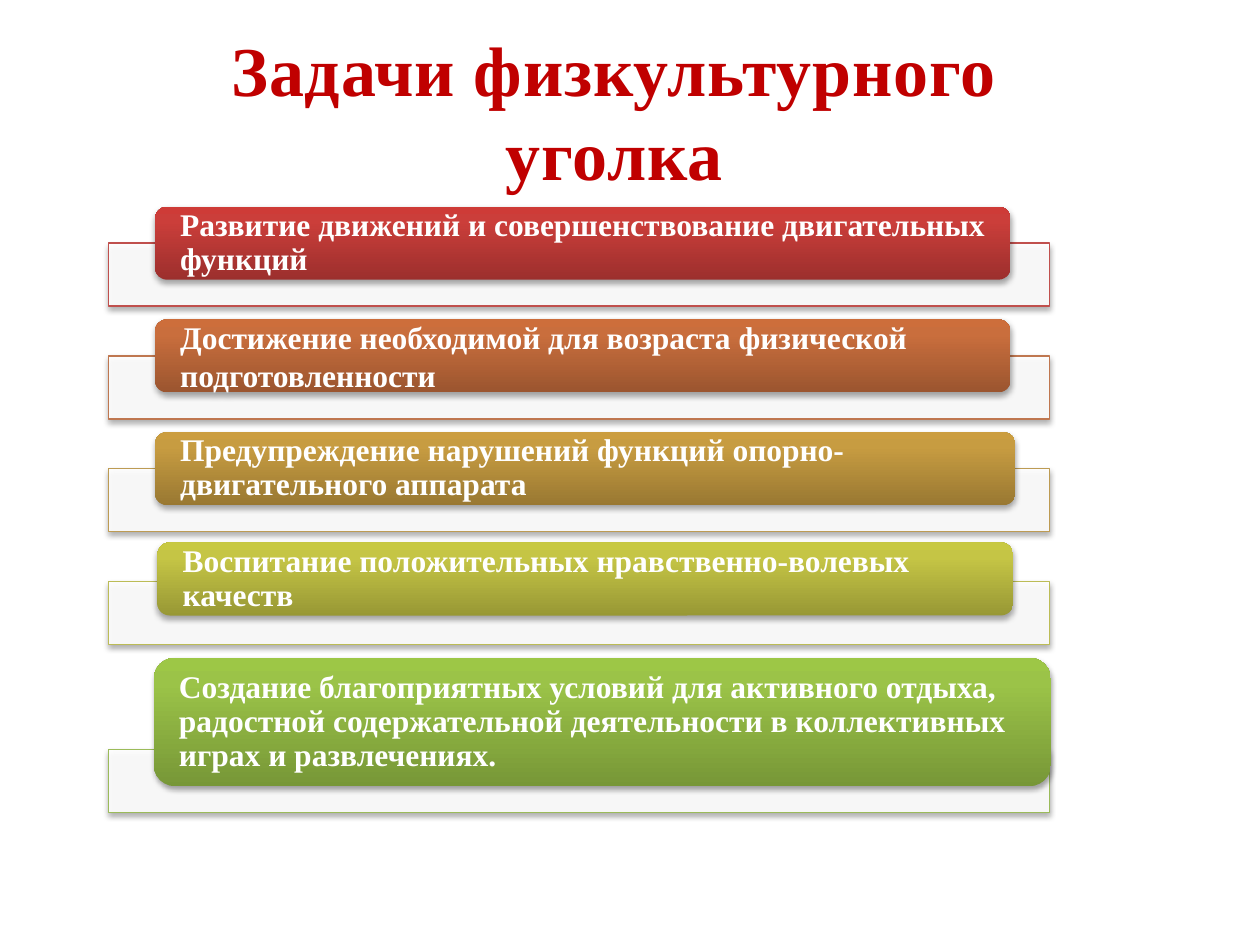
from copy import deepcopy

from lxml.etree import SubElement
from pptx import Presentation
from pptx.dml.color import RGBColor
from pptx.enum.shapes import MSO_SHAPE
from pptx.enum.text import MSO_ANCHOR, MSO_AUTO_SIZE, PP_ALIGN
from pptx.oxml.ns import qn
from pptx.util import Inches, Pt

COLUMNS, ROWS = 100, 75
WIDTH, HEIGHT = Inches(10), Inches(7.5)
FONT = "Times New Roman"
CORNER_INSET = 0.29 / 6

TITLE_BOX = (14.8, 1.6, 67.9, 14.5)
LIST_BOX = (8.6, 16.4, 74.7, 48.1)
ROW_PITCH = 8.95
BAR_HEIGHT = 5
BAR_OVERLAP = 2.9

# text, bar line, panel gradient, panel (left, top shift, width, height), line spacing
TASKS = [
    ("Развитие движений и совершенствование двигательных функций",
     "C0504D", ("9C2F2D", "CB3E3A", "CE3B37"), (3.7, 0, 67.9, 5.8), 0.9),
    ("Достижение необходимой для возраста физической подготовленности",
     "BF7750", ("9B552F", "C96E3D", "CD6E3B"), (3.7, 0, 67.9, 5.8), 1.0),
    ("Предупреждение нарушений функций опорно-двигательного аппарата",
     "BD9B53", ("997832", "C79C41", "CB9D3F"), (3.7, 0, 68.3, 5.8), 0.9),
    ("Воспитание положительных нравственно-волевых качеств",
     "BCBC56", ("989835", "C5C545", "C8C942"), (3.9, -0.2, 67.9, 5.8), 0.9),
    ("Создание благоприятных условий для активного отдыха, радостной "
     "содержательной деятельности в коллективных играх и развлечениях.",
     "9BBB59", ("779737", "9BC348", "9DC746"), (3.6, 0, 71.2, 10.2), 0.9),
]


def color(value):
    return RGBColor.from_string(value)


def place(box):
    left, top, width, height = box
    return (round(WIDTH * left / COLUMNS), round(HEIGHT * top / ROWS),
            round(WIDTH * width / COLUMNS), round(HEIGHT * height / ROWS))


def style_font(font, size, value):
    font.name = FONT
    font.size = Pt(size)
    font.bold = True
    font.color.rgb = color(value)


def add_shadow(shape):
    shape.shadow.inherit = False
    effects = shape.element.spPr.find(qn("a:effectLst"))
    shadow = SubElement(effects, qn("a:outerShdw"), blurRad="40000",
                        dist="23000", dir="5400000", rotWithShape="0")
    black = SubElement(shadow, qn("a:srgbClr"), val="000000")
    SubElement(black, qn("a:alpha"), val="35000")


def fill_gradient(shape, values):
    shape.fill.gradient()
    shape.fill.gradient_angle = 90
    stop_list = shape.element.spPr.find(".//" + qn("a:gsLst"))
    stop_list.append(deepcopy(stop_list[-1]))
    for stop, value, position in zip(shape.fill.gradient_stops, values, (0, 0.8, 1)):
        stop.color.rgb = color(value)
        stop.position = position


def add_title(page, box, text):
    frame = page.shapes.add_textbox(*place(box)).text_frame
    frame.word_wrap = True
    frame.auto_size = MSO_AUTO_SIZE.SHAPE_TO_FIT_TEXT
    para = frame.paragraphs[0]
    para.alignment = PP_ALIGN.CENTER
    span = para.add_run()
    span.text = text
    style_font(para.font, 40, "C00000")
    span.font._element.set("spc", "50")


def add_bar(page, box, line):
    bar = page.shapes.add_shape(MSO_SHAPE.RECTANGLE, *place(box))
    bar.fill.solid()
    bar.fill.fore_color.rgb = color("FFFFFF")
    white = bar.element.spPr.find(qn("a:solidFill"))[0]
    SubElement(white, qn("a:alpha"), val="90000")
    bar.line.color.rgb = color(line)
    bar.line.width = Pt(0.75)
    add_shadow(bar)


def add_panel(page, box, text, gradient, spacing):
    panel = page.shapes.add_shape(MSO_SHAPE.ROUNDED_RECTANGLE, *place(box))
    fill_gradient(panel, gradient)
    panel.line.fill.background()
    add_shadow(panel)
    frame = panel.text_frame
    frame.word_wrap = True
    frame.vertical_anchor = MSO_ANCHOR.MIDDLE
    frame.margin_left = frame.margin_right = Inches(0.2) - round(panel.height * CORNER_INSET)
    frame.margin_top = frame.margin_bottom = 0
    para = frame.paragraphs[0]
    para.text = text
    para.alignment = PP_ALIGN.LEFT
    para.line_spacing = spacing
    style_font(para.font, 18, "FFFFFF")


def add_task_list(page, box, tasks):
    left, top, width, _ = box
    for index, (text, line, gradient, panel, spacing) in enumerate(tasks):
        indent, shift, panel_width, panel_height = panel
        row_top = top + index * ROW_PITCH
        bar_top = row_top + panel_height - BAR_OVERLAP
        add_bar(page, (left, bar_top, width, BAR_HEIGHT), line)
        add_panel(page, (left + indent, row_top + shift, panel_width, panel_height),
                  text, gradient, spacing)


def main():
    deck = Presentation()
    deck.slide_width, deck.slide_height = WIDTH, HEIGHT
    page = deck.slides.add_slide(deck.slide_layouts[6])
    add_title(page, TITLE_BOX, "Задачи физкультурного уголка")
    add_task_list(page, LIST_BOX, TASKS)
    deck.save("out.pptx")


if __name__ == "__main__":
    main()
